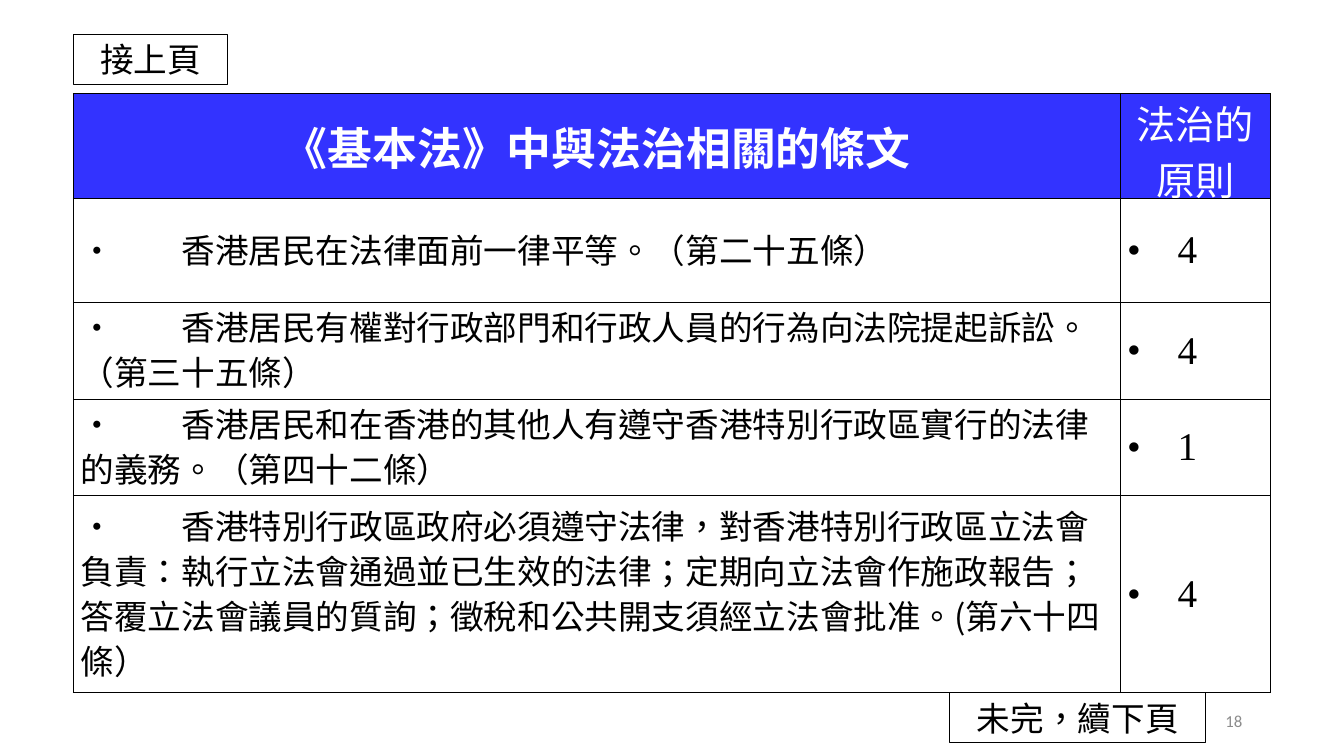
"""Build the slide of Basic Law articles that relate to the rule of law."""
from lxml import etree
from pptx import Presentation, util as u
from pptx.dml.color import RGBColor
from pptx.enum import shapes, text
from pptx.oxml.ns import qn

CJK, LATIN, SERIF = "Noto Sans CJK SC", "Calibri", "Times New Roman"
LANGUAGE = "zh-TW"
BLACK, WHITE, BLUE, GREY = "000000", "FFFFFF", "3333FF", "8C8C8C"
HEADINGS = ("《基本法》中與法治相關的條文", "法治的原則")
ARTICLES = [
    ("香港居民在法律面前一律平等。（第二十五條）", "4"),
    ("香港居民有權對行政部門和行政人員的行為向法院提起訴訟。（第三十五條）", "4"),
    ("香港居民和在香港的其他人有遵守香港特別行政區實行的法律的義務。（第四十二條）", "1"),
    ("香港特別行政區政府必須遵守法律，對香港特別行政區立法會負責：執行立法會通過並已生效的法律；"
     "定期向立法會作施政報告；答覆立法會議員的質詢；徵稅和公共開支須經立法會批准。(第六十四條）", "4"),
]
COLUMNS = (10.38, 1.49)
ROWS = (1.04, 1.03, 0.96, 0.96, 1.95)
TABLE_LEFT, TABLE_TOP = 0.73, 0.93
PAGE_LABELS = [("未完，續下頁", 9.42, 6.87, 2.54), ("接上頁", 0.73, 0.34, 1.53)]
LABEL_HEIGHT = 0.5
PAGE_NUMBER = "18"
CENTER, RIGHT, LEFT = text.PP_ALIGN.CENTER, text.PP_ALIGN.RIGHT, text.PP_ALIGN.LEFT
MIDDLE, TOP = text.MSO_ANCHOR.MIDDLE, text.MSO_ANCHOR.TOP


def color(value):
    return RGBColor.from_string(value)


def write(frame, words, size, font, ink=BLACK, align=LEFT, bold=False):
    frame.word_wrap = True
    paragraph = frame.paragraphs[0]
    paragraph.alignment = align
    run = paragraph.add_run()
    run.text = words
    run.font.size, run.font.name, run.font.bold = u.Pt(size), font, bold
    run.font.color.rgb = color(ink)
    run.font._element.set("lang", LANGUAGE)
    etree.SubElement(run.font._element, qn("a:ea"), typeface=CJK)
    return paragraph


def style_cell(cell, fill=None, anchor=MIDDLE):
    cell.margin_left = cell.margin_right = u.Inches(0.07)
    cell.margin_top = cell.margin_bottom = 0
    cell.vertical_anchor = anchor
    if fill:
        cell.fill.solid()
        cell.fill.fore_color.rgb = color(fill)
    else:
        cell.fill.background()
    properties = cell._tc.get_or_add_tcPr()
    for place, side in enumerate(("lnL", "lnR", "lnT", "lnB")):
        border = etree.Element(qn(f"a:{side}"), w=str(u.Pt(1)))
        solid = etree.SubElement(border, qn("a:solidFill"))
        etree.SubElement(solid, qn("a:srgbClr"), val=BLACK)
        properties.insert(place, border)


def add_bullet(paragraph):
    properties = paragraph._p.get_or_add_pPr()
    properties.set("marL", str(u.Inches(0.5)))
    properties.set("indent", str(-u.Inches(0.5)))
    etree.SubElement(properties, qn("a:buFont"), typeface=SERIF)
    etree.SubElement(properties, qn("a:buChar"), char="•")


def add_tab_stop(paragraph, position):
    stops = etree.SubElement(paragraph._p.get_or_add_pPr(), qn("a:tabLst"))
    etree.SubElement(stops, qn("a:tab"), pos=str(u.Inches(position)), algn="l")


def add_articles(slide):
    table = slide.shapes.add_table(
        len(ROWS), len(COLUMNS), u.Inches(TABLE_LEFT), u.Inches(TABLE_TOP),
        u.Inches(sum(COLUMNS)), u.Inches(sum(ROWS))).table
    for column, width in zip(table.columns, COLUMNS):
        column.width = u.Inches(width)
    for row, height in zip(table.rows, ROWS):
        row.height = u.Inches(height)

    title, principle = table.cell(0, 0), table.cell(0, 1)
    style_cell(title, BLUE)
    style_cell(principle, BLUE, TOP)
    heading = write(title.text_frame, HEADINGS[0], 32, LATIN, WHITE, CENTER, True)
    heading.space_before = u.Pt(6)
    write(principle.text_frame, HEADINGS[1], 28, SERIF, WHITE, CENTER)

    for row, (article, number) in enumerate(ARTICLES, 1):
        article_cell, number_cell = table.cell(row, 0), table.cell(row, 1)
        style_cell(article_cell)
        style_cell(number_cell)
        clause = write(article_cell.text_frame, f"•\t{article}", 24, CJK)
        clause.line_spacing = u.Pt(32)
        add_tab_stop(clause, 1)
        add_bullet(write(number_cell.text_frame, number, 28, SERIF))


def add_page_label(slide, words, left, top, width):
    label = slide.shapes.add_shape(
        shapes.MSO_SHAPE.RECTANGLE, u.Inches(left), u.Inches(top),
        u.Inches(width), u.Inches(LABEL_HEIGHT))
    label.shadow.inherit = False
    label.fill.background()
    label.line.color.rgb = color(BLACK)
    label.line.width = u.Pt(0.75)
    label.text_frame.vertical_anchor = TOP
    label.text_frame.auto_size = text.MSO_AUTO_SIZE.SHAPE_TO_FIT_TEXT
    write(label.text_frame, words, 24, LATIN, align=CENTER)


def main():
    deck = Presentation()
    deck.slide_width, deck.slide_height = u.Inches(13.33), u.Inches(7.5)
    slide = deck.slides.add_slide(deck.slide_layouts[6])
    page = slide.shapes.add_textbox(
        u.Inches(9.42), u.Inches(6.95), u.Inches(3), u.Inches(0.4))
    page.text_frame.vertical_anchor = MIDDLE
    write(page.text_frame, PAGE_NUMBER, 12, LATIN, GREY, RIGHT)
    add_articles(slide)
    for label in PAGE_LABELS:
        add_page_label(slide, *label)
    deck.save("out.pptx")


if __name__ == "__main__":
    main()
